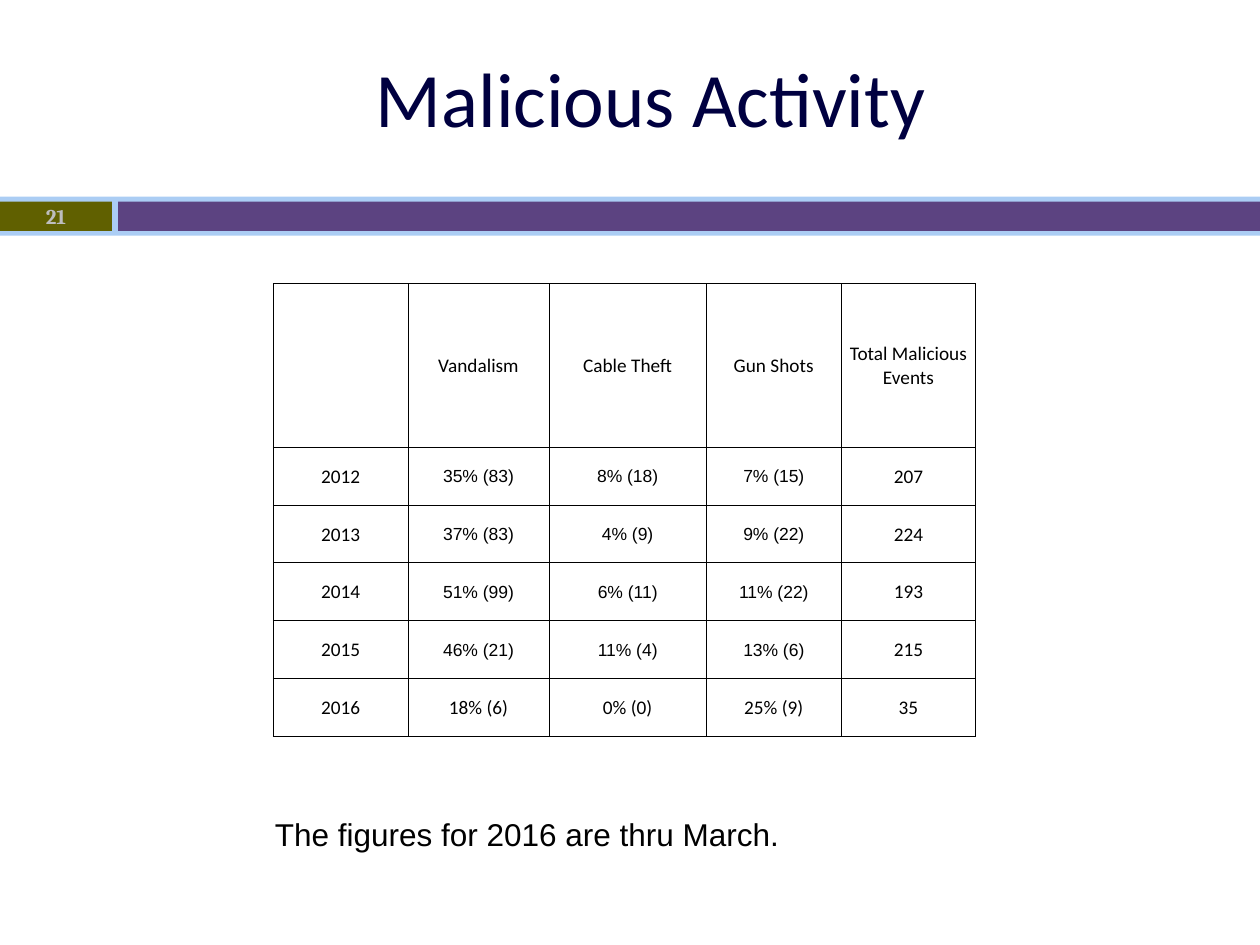
from typing import NamedTuple

from lxml import etree
from pptx import Presentation
from pptx.dml.color import RGBColor
from pptx.enum.shapes import MSO_SHAPE
from pptx.enum.text import MSO_ANCHOR, PP_ALIGN
from pptx.oxml.ns import qn
from pptx.util import Pt

RECT = MSO_SHAPE.RECTANGLE
MID, TOP = MSO_ANCHOR.MIDDLE, MSO_ANCHOR.TOP
MAIN, LEFT = PP_ALIGN.CENTER, PP_ALIGN.LEFT
BLACK = "000000"


class Box(NamedTuple):
    x: float
    y: float
    w: float
    h: float


class Bar(NamedTuple):
    box: Box
    fill: str


class Style(NamedTuple):
    font: str
    size: float
    color: str = BLACK
    bold: bool = False


class Label(NamedTuple):
    box: Box
    text: str
    style: Style
    align: PP_ALIGN = MAIN
    anchor: MSO_ANCHOR = MID


BARS = [
    Bar(Box(0, 112.3, 720, 22.3), "ABCDF4"),
    Bar(Box(0, 115.2, 64, 16.8), "606000"),
    Bar(Box(67.5, 115.2, 652.5, 16.8), "5C4381"),
]
LABELS = [
    Label(Box(75, 12, 594, 86.4), "Malicious Activity",
          Style("Calibri", 44, "000040")),
    Label(Box(0, 112.3, 64, 22.3), "21",
          Style("Cambria", 12, "BDBDBD", True)),
    Label(Box(150, 462, 408, 29), "The figures for 2016 are thru March.",
          Style("Arial", 18), LEFT, TOP),
]

# Table content and grid
ROWS = [
    ["", "Vandalism", "Cable Theft", "Gun Shots", "Total Malicious Events"],
    ["2012", "35% (83)", "8% (18)", "7% (15)", "207"],
    ["2013", "37% (83)", "4% (9)", "9% (22)", "224"],
    ["2014", "51% (99)", "6% (11)", "11% (22)", "193"],
    ["2015", "46% (21)", "11% (4)", "13% (6)", "215"],
    ["2016", "18% (6)", "0% (0)", "25% (9)", "35"],
]
COLS = [77, 80.5, 90, 77, 77]
HEAD, ROW = 93.6, 33
GRID = Box(156.2, 162, sum(COLS), HEAD + ROW * (len(ROWS) - 1))
PLAIN = Style("Calibri", 11)
SHARE = Style("Arial", 10)


def rgb(code: str) -> RGBColor:
    return RGBColor.from_string(code)


def place(box: Box) -> list[Pt]:
    return [Pt(n) for n in box]


def write(para, text: str, style: Style, align: PP_ALIGN) -> None:
    para.alignment = align
    run = para.add_run()
    run.text = text
    font = run.font
    font.name, font.size, font.bold = style.font, Pt(style.size), style.bold
    font.color.rgb = rgb(style.color)


def draw_bar(slide, bar: Bar) -> None:
    shape = slide.shapes.add_shape(RECT, *place(bar.box))
    shape.shadow.inherit = False
    shape.fill.solid()
    shape.fill.fore_color.rgb = rgb(bar.fill)
    shape.line.fill.background()


def draw_label(slide, label: Label) -> None:
    frame = slide.shapes.add_textbox(*place(label.box)).text_frame
    frame.word_wrap = True
    frame.vertical_anchor = label.anchor
    write(frame.paragraphs[0], label.text, label.style, label.align)


def add_edges(cell) -> None:
    props = cell._tc.get_or_add_tcPr()
    for i, side in enumerate(("lnL", "lnR", "lnT", "lnB")):
        line = etree.Element(qn(f"a:{side}"), w=str(Pt(0.5)))
        fill = etree.SubElement(line, qn("a:solidFill"))
        etree.SubElement(fill, qn("a:srgbClr"), val=BLACK)
        props.insert(i, line)


def draw_cell(cell, text: str, style: Style) -> None:
    cell.fill.background()
    cell.vertical_anchor = MID
    cell.margin_left = cell.margin_right = cell.margin_top = Pt(0.75)
    cell.margin_bottom = Pt(0)
    if text:
        write(cell.text_frame.paragraphs[0], text, style, MAIN)
    add_edges(cell)


def draw_table(slide) -> None:
    table = slide.shapes.add_table(len(ROWS), len(COLS), *place(GRID)).table
    table.first_row = table.horz_banding = False
    for col, width in zip(table.columns, COLS):
        col.width = Pt(width)
    last = len(ROWS) - 1
    for r, row in enumerate(ROWS):
        table.rows[r].height = Pt(ROW if r else HEAD)
        for c, text in enumerate(row):
            # Shares of the full years are set in the second style
            share = 0 < r < last and 0 < c < len(COLS) - 1
            draw_cell(table.cell(r, c), text, SHARE if share else PLAIN)


def main() -> None:
    deck = Presentation()
    deck.slide_width, deck.slide_height = Pt(720), Pt(540)
    slide = deck.slides.add_slide(deck.slide_layouts[6])
    # Divider band
    for bar in BARS:
        draw_bar(slide, bar)
    # Title, page number and note
    for label in LABELS:
        draw_label(slide, label)
    # Yearly figures
    draw_table(slide)
    deck.save("out.pptx")


if __name__ == "__main__":
    main()
